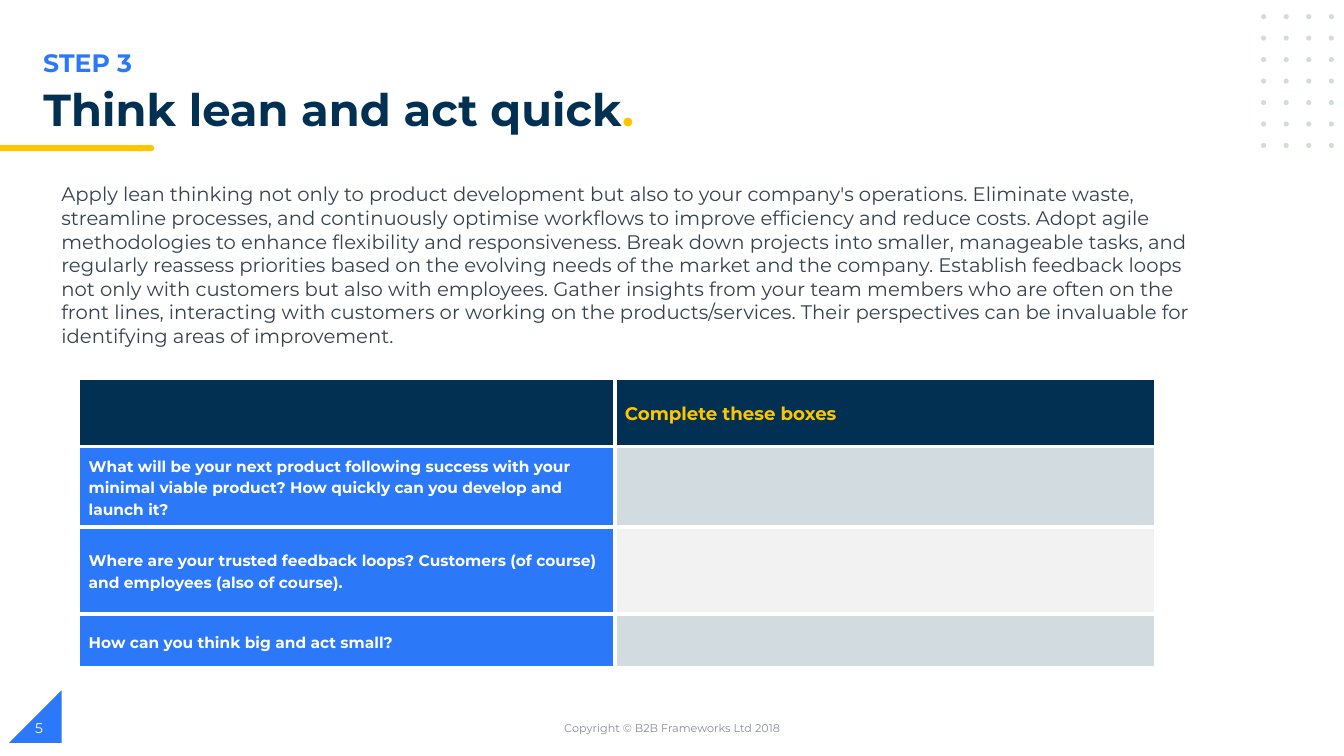
"""Build the "Think lean and act quick" worksheet slide."""
from pptx import Presentation
from pptx.dml.color import RGBColor
from pptx.enum.shapes import MSO_SHAPE as Shape
from pptx.enum.text import MSO_ANCHOR as Anchor, MSO_AUTO_SIZE as Fit, PP_ALIGN as Align
from pptx.oxml import parse_xml
from pptx.oxml.ns import nsdecls, qn
from pptx.util import Inches, Pt

COLOURS = {
    "navy": "023053", "blue": "2B79F8", "yellow": "FFC600", "mist": "D1DBE0",
    "pale": "F2F2F2", "slate": "374151", "grey": "888C97", "white": "FFFFFF",
}
WIDE, HIGH = Inches(13.333), Inches(7.5)


def area(left, top, width, height):
    """Turn percentages of the slide into left, top, width and height."""
    return [int(share * side / 100) for share, side in
            zip((left, top, width, height), (WIDE, HIGH, WIDE, HIGH))]


def write(frame, runs, size, bold=False, spacing=None, align=Align.LEFT):
    """Fill the first paragraph with (text, colour) runs."""
    para = frame.paragraphs[0]
    para.alignment = align
    para.line_spacing = spacing
    for text, colour in runs:
        span = para.add_run()
        span.text = text
        for name, value in {"name": "Montserrat", "size": Pt(size), "bold": bold}.items():
            setattr(span.font, name, value)
        span.font.color.rgb = RGBColor.from_string(COLOURS[colour])


deck = Presentation()
deck.slide_width, deck.slide_height = WIDE, HIGH
slide = deck.slides.add_slide(deck.slide_layouts[5])

decorations = [
    (Shape.RIGHT_TRIANGLE, (0.68, 91.33, 3.9, 6.93), "blue"),
    (Shape.FLOWCHART_TERMINATOR, (10.05, 19.2, 1.43, 0.8), "yellow"),
    (Shape.RECTANGLE, (0, 19.2, 10.58, 0.8), "yellow"),
]
decorations += [
    (Shape.OVAL, (93.83 + 1.68 * column, 1.87 + 2.84 * row, 0.38, 0.67), "mist")
    for row in range(7) for column in range(4)
]
for kind, place, colour in decorations:
    shape = slide.shapes.add_shape(kind, *area(*place))
    shape.shadow.inherit = False
    shape.fill.solid()
    shape.fill.fore_color.rgb = RGBColor.from_string(COLOURS[colour])
    shape.line.fill.background()
    if kind == Shape.RIGHT_TRIANGLE:
        shape._element.spPr.find(qn("a:xfrm")).set("flipH", "1")

title = slide.shapes.title
title.left, title.top, title.width, title.height = area(2.48, 10.93, 86.93, 7.47)
for name, value in {"vertical_anchor": Anchor.TOP, "auto_size": Fit.NONE, "word_wrap": True}.items():
    setattr(title.text_frame, name, value)
write(title.text_frame, [("Think lean and act quick", "navy"), (".", "yellow")], 32, True, 0.9)

ADVICE = (
    "Apply lean thinking not only to product development but also to your company's operations. "
    "Eliminate waste, streamline processes, and continuously optimise workflows to improve "
    "efficiency and reduce costs. Adopt agile methodologies to enhance flexibility and "
    "responsiveness. Break down projects into smaller, manageable tasks, and regularly reassess "
    "priorities based on the evolving needs of the market and the company. Establish feedback "
    "loops not only with customers but also with employees. Gather insights from your team "
    "members who are often on the front lines, interacting with customers or working on the "
    "products/services. Their perspectives can be invaluable for identifying areas of improvement."
)
texts = [
    ("STEP 3", (2.48, 5.6, 50.18, 5.33), "blue", 18, True, Align.LEFT, Anchor.TOP),
    (ADVICE, (3.83, 23.47, 85.58, 23.33), "slate", 14, False, Align.LEFT, Anchor.TOP),
    ("Copyright © B2B Frameworks Ltd 2018", (33.15, 93.6, 33.75, 5.33), "grey", 8, False,
     Align.CENTER, Anchor.MIDDLE),
    ("5", (1.88, 93.6, 22.5, 5.33), "white", 10, False, Align.LEFT, Anchor.MIDDLE),
]
for text, place, colour, size, bold, align, anchor in texts:
    box = slide.shapes.add_textbox(*area(*place))
    box.text_frame.word_wrap = True
    box.text_frame.vertical_anchor = anchor
    write(box.text_frame, [(text, colour)], size, bold, align=align)

rows = [
    (9.07, ("", "Complete these boxes"), ("navy", "navy"), "yellow", 13),
    (10.67, ("What will be your next product following success with your minimal viable product? "
             "How quickly can you develop and launch it?", ""), ("blue", "mist"), "white", 11),
    (11.47, ("Where are your trusted feedback loops? Customers (of course) and employees "
             "(also of course).", ""), ("blue", "pale"), "white", 11),
    (7.2, ("How can you think big and act small?", ""), ("blue", "mist"), "white", 11),
]
table = slide.shapes.add_table(len(rows), 2, *area(5.85, 50, 80.18, 38.41)).table
table.first_row = table.horz_banding = False
for column, share in zip(table.columns, (39.9, 40.28)):
    column.width = int(WIDE * share / 100)
for row, (share, words, fills, colour, size) in zip(table.rows, rows):
    row.height = int(HIGH * share / 100)
    for cell, text, fill in zip(row.cells, words, fills):
        cell.fill.solid()
        cell.fill.fore_color.rgb = RGBColor.from_string(COLOURS[fill])
        cell.vertical_anchor = Anchor.MIDDLE
        cell.margin_top = cell.margin_bottom = 0
        if text:
            write(cell.text_frame, [(text, colour)], size, True, 1.15)
        for index, side in enumerate("LRTB"):
            cell._tc.get_or_add_tcPr().insert(index, parse_xml(
                f'<a:ln{side} {nsdecls("a")} w="{Pt(3)}"><a:solidFill>'
                f'<a:srgbClr val="{COLOURS["white"]}"/></a:solidFill></a:ln{side}>'))

deck.save("out.pptx")
